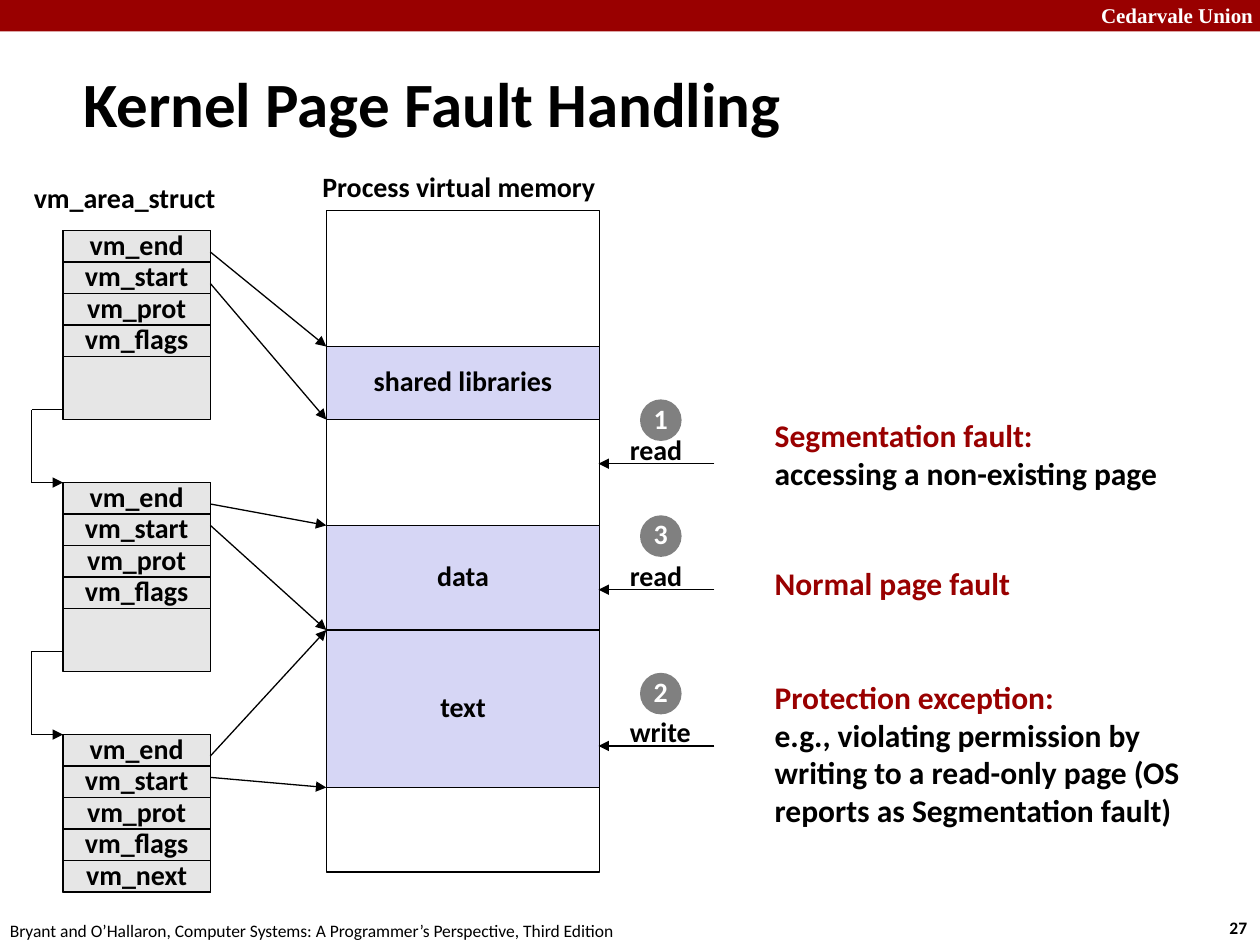
import pptx
import pptx.util
import pptx.dml.color
import pptx.enum.shapes
import pptx.enum.text
import pptx.oxml.ns
import lxml.etree

Inches = pptx.util.Inches
RGB = pptx.dml.color.RGBColor
SHAPE = pptx.enum.shapes.MSO_SHAPE
ALIGN = pptx.enum.text.PP_ALIGN
FIT = pptx.enum.text.MSO_AUTO_SIZE
MIDDLE = pptx.enum.text.MSO_ANCHOR.MIDDLE
qn = pptx.oxml.ns.qn

RED = RGB(0x99, 0x00, 0x00)
BLACK = RGB(0x00, 0x00, 0x00)
WHITE = RGB(0xFF, 0xFF, 0xFF)
LIGHT = RGB(0xE6, 0xE6, 0xE6)
GREY = RGB(0x80, 0x80, 0x80)
LILAC = RGB(0xD6, 0xD6, 0xF5)


def write(frame, text, size=16, color=BLACK, first=None, bold=True,
          font="Calibri", align=ALIGN.LEFT, space=None, wrap=False):
    """Fill a frame, one paragraph a line; first colours the first line."""
    frame.word_wrap = wrap
    for i, line in enumerate(text.split("\n")):
        par = frame.paragraphs[0] if i == 0 else frame.add_paragraph()
        par.alignment = align
        if space is not None:
            par.line_spacing = 0.88
            par.space_before = pptx.util.Pt(space)
        run = par.add_run()
        run.text = line
        run.font.name = font
        run.font.size = pptx.util.Pt(size)
        run.font.bold = bold
        run.font.color.rgb = first if first and i == 0 else color


def label(slide, box, text, **form):
    item = slide.shapes.add_textbox(*map(Inches, box))
    write(item.text_frame, text, **form)
    item.text_frame.auto_size = FIT.SHAPE_TO_FIT_TEXT


def block(slide, box, fill, text="", kind=SHAPE.RECTANGLE, edge=True, **form):
    item = slide.shapes.add_shape(kind, *map(Inches, box))
    item.shadow.inherit = False
    item.fill.solid()
    item.fill.fore_color.rgb = fill
    if edge:
        item.line.color.rgb = BLACK
        item.line.width = pptx.util.Pt(0.75)
    else:
        item.line.fill.background()
    if text:
        item.text_frame.vertical_anchor = MIDDLE
        write(item.text_frame, text, align=ALIGN.CENTER, **form)


def line(slide, start, end, arrow=True):
    kind = pptx.enum.shapes.MSO_CONNECTOR.STRAIGHT
    item = slide.shapes.add_connector(kind, *map(Inches, (*start, *end)))
    item.line.color.rgb = BLACK
    item.line.width = pptx.util.Pt(0.75)
    if arrow:
        tip = lxml.etree.SubElement(item.line._get_or_add_ln(), qn("a:tailEnd"))
        tip.set("type", "triangle")
    lxml.etree.SubElement(item._element.spPr, qn("a:effectLst"))


def frame(slide, title):
    """Header band, footer and title."""
    block(slide, (0, 0, 10, 0.25), RED, edge=False)
    label(slide, (8.64, -0.03, 1.43, 0.3), "Cedarvale Union", size=12,
          color=WHITE, font="Times New Roman", wrap=True)
    label(slide, (9.66, 7.23, 0.37, 0.27), "27", size=10)
    label(slide, (-0.02, 7.25, 5.08, 0.27),
          "Bryant and O’Hallaron, Computer Systems: "
          "A Programmer’s Perspective, Third Edition", size=10, bold=False)
    head = slide.shapes.title
    head.left, head.top, head.width, head.height = map(
        Inches, (0.56, 0.5, 7.69, 0.63))
    head.text_frame.vertical_anchor = MIDDLE
    head.text_frame.auto_size = FIT.NONE
    write(head.text_frame, title, size=36, wrap=True)


def struct(slide, box, names):
    """One record: a grey body with a row for each field."""
    left, top, wide, _ = box
    row = 0.25
    block(slide, box, LIGHT)
    for i, name in enumerate(names):
        block(slide, (left, top + i * row, wide, row), LIGHT, name, space=6)


def memory(slide, box, areas):
    """Address space; each area is (name, offset, height)."""
    left, top, wide, _ = box
    label(slide, (left - 0.13, top - 0.34, 2.39, 0.34),
          "Process virtual memory", space=10)
    block(slide, box, WHITE)
    for name, down, high in areas:
        block(slide, (left, top + down, wide, high), LILAC, name, space=6)


def chain(slide, left, start, end):
    """Link from the side of one record to the top of the next."""
    turn = left - 0.25
    line(slide, (left, start), (turn, start), arrow=False)
    line(slide, (turn, start), (turn, end), arrow=False)
    line(slide, (turn, end), (left, end))


def access(slide, box, mark, verb):
    """Arrow along the foot of the box, with a verb and a numbered disc."""
    left, top, wide, high = box
    foot = top + high
    line(slide, (left + wide, foot), (left, foot))
    label(slide, (left + 0.15, foot - 0.26, 0.75, 0.33), verb, space=6)
    block(slide, (left + 0.33, top, 0.33, 0.33), GREY, mark,
          kind=SHAPE.OVAL, edge=False, color=WHITE, space=9)


def main():
    deck = pptx.Presentation()
    deck.slide_width, deck.slide_height = Inches(10), Inches(7.5)
    slide = deck.slides.add_slide(deck.slide_layouts[5])
    frame(slide, "Kernel Page Fault Handling")

    # Records on the left
    fields = ["vm_end", "vm_start", "vm_prot", "vm_flags"]
    label(slide, (0.17, 1.42, 1.66, 0.33), "vm_area_struct", space=10)
    for top in (1.83, 3.83):
        struct(slide, (0.5, top, 1.17, 1.5), fields)
    struct(slide, (0.5, 5.83, 1.17, 1.25), fields + ["vm_next"])
    chain(slide, 0.5, 3.25, 3.83)
    chain(slide, 0.5, 5.17, 5.83)

    # Memory in the middle, with the bounds that the records point to
    memory(slide, (2.59, 1.67, 2.17, 5.25),
           [("text", 3.33, 1.25), ("data", 2.5, 0.83),
            ("shared libraries", 1.08, 0.58)])
    for start, end in ((2, 2.75), (2.25, 3.33), (4, 4.17),
                       (4.17, 5), (6, 5), (6.17, 6.25)):
        line(slide, (1.67, start), (2.59, end))

    # Accesses and their outcomes on the right
    for mark, verb, top, high in (("1", "read", 3.17, 0.51),
                                  ("2", "write", 5.34, 0.58),
                                  ("3", "read", 4.09, 0.59)):
        access(slide, (4.75, top, 0.92, high), mark, verb)
    for box, text, wrap in (
            ((6.05, 3.25, 3.27, 0.71),
             "Segmentation fault:\naccessing a non-existing page", False),
            ((6.05, 4.43, 2.09, 0.4), "Normal page fault", False),
            ((6.05, 5.33, 3.7, 1.31),
             "Protection exception:\ne.g., violating permission by writing to "
             "a read-only page (OS reports as Segmentation fault)", True)):
        label(slide, box, text, size=18, first=RED, wrap=wrap)

    deck.save("out.pptx")


if __name__ == "__main__":
    main()
